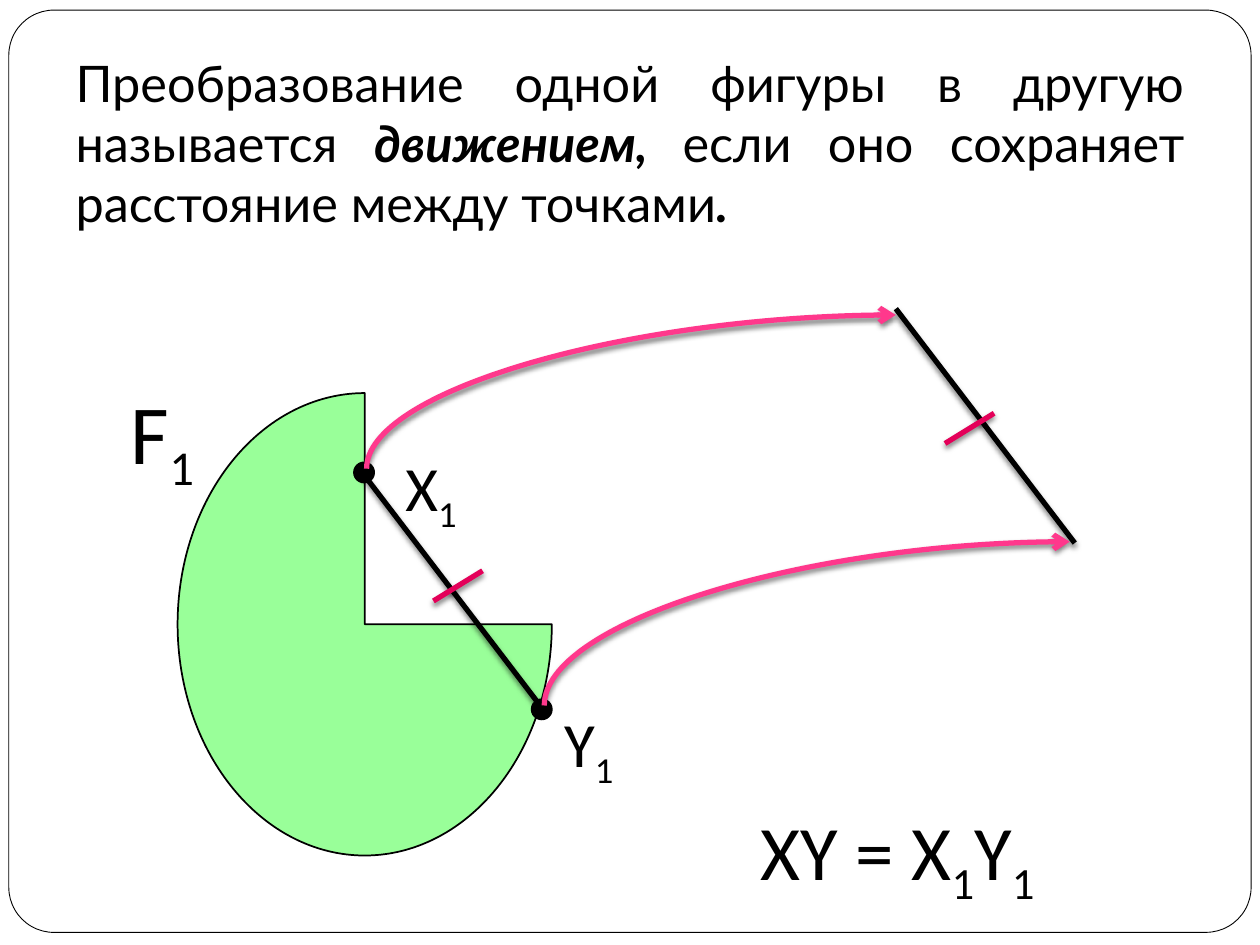
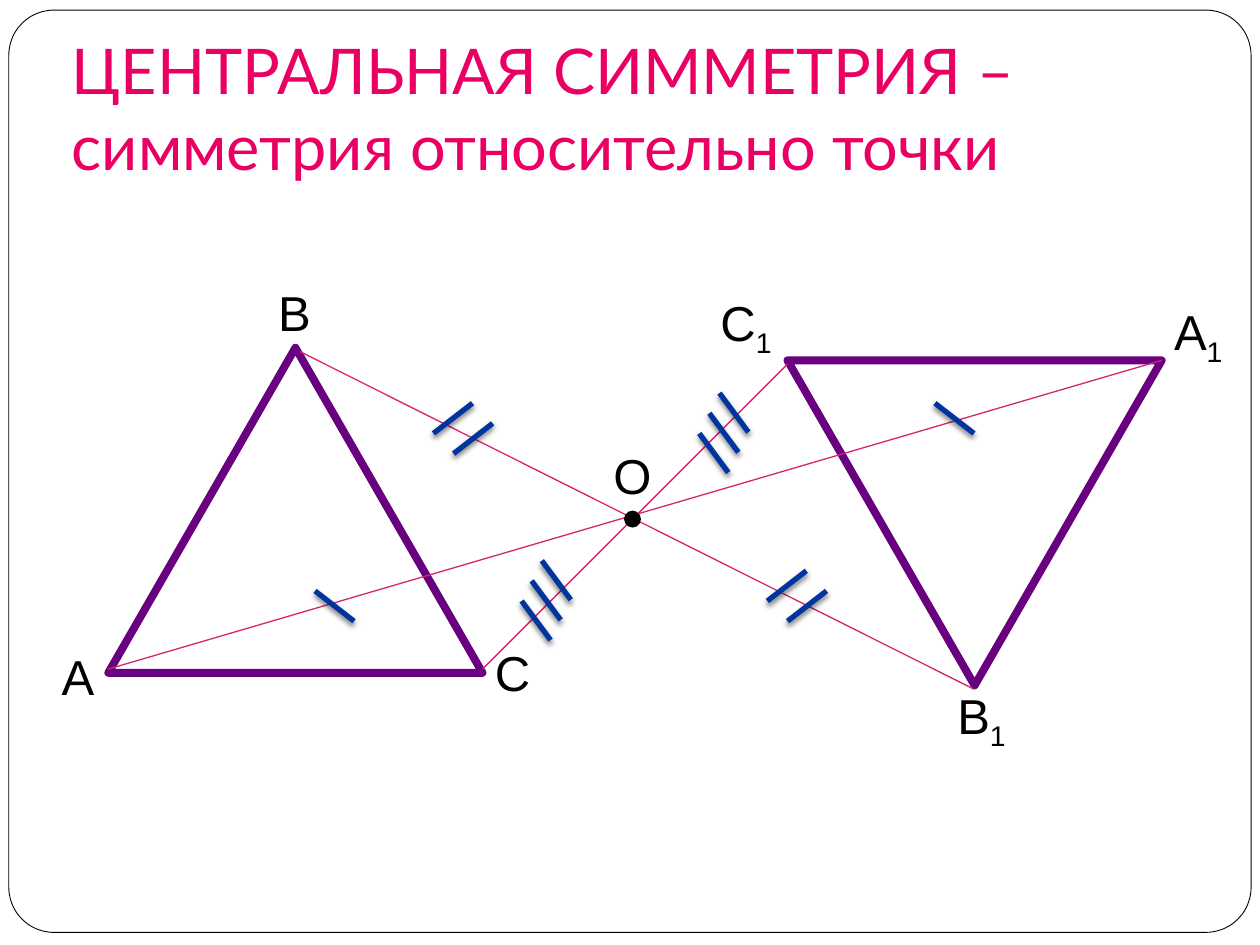
"""Build two geometry slides: motion and central symmetry."""
from itertools import groupby

from lxml import etree
from pptx import Presentation
from pptx.dml.color import RGBColor
from pptx.enum.shapes import MSO_CONNECTOR, MSO_SHAPE
from pptx.enum.text import MSO_ANCHOR, MSO_AUTO_SIZE, PP_ALIGN
from pptx.oxml import parse_xml
from pptx.oxml.ns import nsdecls, qn
from pptx.util import Inches, Pt

BLACK = RGBColor(0x00, 0x00, 0x00)
WHITE = RGBColor(0xFF, 0xFF, 0xFF)
GREEN = RGBColor(0x99, 0xFF, 0x99)
PURPLE = RGBColor(0x68, 0x00, 0x7F)
NAVY = RGBColor(0x00, 0x34, 0x9E)
ROSE = RGBColor(0xD4, 0x25, 0x6F)
CRIMSON = RGBColor(0xE4, 0x00, 0x59)
PINK = RGBColor(0xFF, 0x38, 0x8C)
MAGENTA = RGBColor(0xE9, 0x00, 0x62)

STRAIGHT, CURVE = MSO_CONNECTOR.STRAIGHT, MSO_CONNECTOR.CURVE
ROUND, PIE = MSO_SHAPE.ROUNDED_RECTANGLE, MSO_SHAPE.PIE
OVAL, TRIANGLE = MSO_SHAPE.OVAL, MSO_SHAPE.ISOSCELES_TRIANGLE
JUSTIFY, LEFT = PP_ALIGN.JUSTIFY, PP_ALIGN.LEFT
BOTTOM = MSO_ANCHOR.BOTTOM
FIXED, GROW = MSO_AUTO_SIZE.NONE, MSO_AUTO_SIZE.SHAPE_TO_FIT_TEXT

HEAD = {"word_wrap": True, "auto_size": FIXED, "vertical_anchor": BOTTOM,
        "margin_left": Inches(0.1), "margin_right": Inches(0.1),
        "margin_top": Inches(0.05), "margin_bottom": Inches(0.1)}
LABEL = {"word_wrap": True, "auto_size": GROW}
PLAIN = {"bold": False, "italic": False}
STRONG = {"bold": True, "italic": True}
SHADOW = (f'<a:effectLst {nsdecls("a")}><a:outerShdw blurRad="38100" '
          'dist="25400" dir="5400000" rotWithShape="0"><a:srgbClr '
          'val="000000"><a:alpha val="50000"/></a:srgbClr>'
          '</a:outerShdw></a:effectLst>')


def apply(item, values):
    """Set each attribute named in a dict of values."""
    for name, value in values.items():
        setattr(item, name, value)


class Deck:
    """Hold the shared style and the current slide."""

    def __init__(self):
        """Open a blank deck of the right size."""
        self.prs = Presentation()
        self.prs.slide_width, self.prs.slide_height = Inches(10), Inches(7.5)
        self.slide = None

    def page(self):
        """Start a slide with a title."""
        self.slide = self.prs.slides.add_slide(self.prs.slide_layouts[5])

    def frame(self):
        """Put the rounded frame on the slide master."""
        frame = self.shape(ROUND, (0.07, 0.08, 9.86, 7.32), WHITE, BLACK, 0.5)
        frame.adjustments[0] = 0.049
        node = frame._element
        node.nvSpPr.cNvPr.set("id", "99")
        self.prs.slide_master.shapes._spTree.insert(2, node)

    def text(self, para, words, size, face, color, style=PLAIN):
        """Add a run to a paragraph."""
        run = para.add_run()
        run.text = words
        apply(run.font, {"size": Pt(size), "name": face, **style})
        run.font.color.rgb = color
        return run

    def title(self, box, parts, size, color, align=LEFT):
        """Fill and place the title from styled parts."""
        title = self.slide.shapes.title
        apply(title, dict(zip(("left", "top", "width", "height"),
                              map(Inches, box))))
        apply(title.text_frame, HEAD)
        para = title.text_frame.paragraphs[0]
        para.alignment = align
        for words, style in parts:
            self.text(para, words, size, "Lato", color, style)

    def label(self, box, words, size, face):
        """Add a label whose digits are subscripts."""
        area = self.slide.shapes.add_textbox(*map(Inches, box)).text_frame
        apply(area, LABEL)
        para = area.paragraphs[0]
        for low, chars in groupby(words, str.isdigit):
            run = self.text(para, "".join(chars), size, face, BLACK)
            if low:
                run.font._element.set("baseline", "-25000")

    def shape(self, kind, box, fill, line, width):
        """Add a filled and outlined preset shape."""
        shape = self.slide.shapes.add_shape(kind, *map(Inches, box))
        shape.shadow.inherit = False
        shape.fill.solid()
        shape.fill.fore_color.rgb = fill
        shape.line.color.rgb = line
        shape.line.width = Pt(width)
        return shape

    def dot(self, x, y, size):
        """Add a black point by its top left corner."""
        self.shape(OVAL, (x, y, size, size), BLACK, BLACK, 1)

    def line(self, start, end, color, width=3, shade=True, kind=STRAIGHT):
        """Add a line, with a soft shadow if wanted."""
        line = self.slide.shapes.add_connector(kind, *map(Inches, start + end))
        line.line.color.rgb = color
        line.line.width = Pt(width)
        props = line._element.spPr
        if shade:
            props.append(parse_xml(SHADOW))
        else:
            etree.SubElement(props, qn("a:effectLst"))
        return line

    def arc(self, start, end):
        """Add an arrow that leaves upward and arrives rightward."""
        (x, y), (u, v) = start, end
        mid, cent = (x + u) / 2, (y + v) / 2
        wide, high = (y - v) / 2, (u - x) / 2
        arc = self.line((mid + wide, cent + high), (mid - wide, cent - high),
                        PINK, kind=CURVE)
        props = arc._element.spPr
        props.find(qn("a:xfrm")).set("rot", "5400000")
        props.find(qn("a:prstGeom")).set("prst", "curvedConnector2")
        etree.SubElement(props.find(qn("a:ln")), qn("a:tailEnd"), type="arrow")

    def ticks(self, start, size, color, count=1, step=(0, 0)):
        """Add equal marks at a constant step."""
        for i in range(count):
            x, y = (a + i * b for a, b in zip(start, step))
            self.line((x, y), (x + size[0], y + size[1]), color)


def motion(deck):
    """Draw the slide that defines a motion."""
    deck.page()
    deck.frame()
    deck.title((0.5, 0.31, 9, 1.64), [
        ("Преобразование одной фигуры в другую называется ", PLAIN),
        ("движением, ", STRONG),
        ("если оно сохраняет расстояние между точками", PLAIN),
        (". ", STRONG)], 28.8, BLACK, JUSTIFY)
    deck.shape(PIE, (1.41, 3.12, 2.97, 3.67), GREEN, BLACK, 1)
    for x, y in ((2.81, 3.67), (4.22, 5.55)):
        deck.dot(x, y, 0.16)
    for box, words, size in (((0.94, 2.97, 0.78, 0.91), "F1", 48),
                             ((3.12, 3.51, 0.86, 0.71), "X1", 36),
                             ((4.38, 5.54, 0.94, 0.71), "Y1", 36),
                             ((5.94, 6.33, 3.75, 0.84), "XY = X1Y1", 44)):
        deck.label(box, words, size, "Calibri")
    for x, y in ((2.89, 3.77), (7.11, 2.45)):
        deck.line((x, y), (x + 1.42, y + 1.86), BLACK)
    for start in ((3.44, 4.77), (7.5, 3.52)):
        deck.ticks(start, (0.39, -0.24), CRIMSON)
    deck.arc((2.91, 3.72), (7.11, 2.5))
    deck.arc((4.32, 5.6), (8.49, 4.3))


def centre(deck):
    """Draw the slide on symmetry about a point."""
    deck.page()
    deck.title((0.47, 0.3, 9.03, 1.25), [
        ("ЦЕНТРАЛЬНАЯ СИММЕТРИЯ – симметрия относительно точки", PLAIN)],
        36, MAGENTA)
    for x, y, turn in ((0.86, 2.76, 0), (6.25, 2.86, 180)):
        shape = deck.shape(TRIANGLE, (x, y, 2.97, 2.58), WHITE, PURPLE, 4.5)
        shape.rotation = turn
    for x, y, words in ((4.77, 3.49, "О"), (3.83, 5.05, "С"), (0.39, 5.08, "А"),
                        (2.11, 2.19, "В"), (9.22, 2.34, "А1"),
                        (7.5, 5.39, "В1"), (5.62, 2.27, "С1")):
        wide = 0.55 if words == "О" else 0.86
        deck.label((x, y, wide, 0.57), words, 28, "Arial")
    for start, end in (((0.86, 5.31), (9.22, 2.86)),
                       ((2.38, 2.79), (7.73, 5.47)),
                       ((3.83, 5.31), (6.25, 2.89))):
        deck.line(start, end, ROSE, 0.75, False)
    for size, count, step, starts in (
            ((0.31, 0.24), 1, (0, 0), ((2.5, 4.69), (7.42, 3.2))),
            ((0.31, -0.24), 2, (0.16, 0.16), ((3.44, 3.44), (6.09, 4.77))),
            ((0.23, 0.31), 3, (0.08, -0.16), ((5.55, 3.44), (4.14, 4.77)))):
        for start in starts:
            deck.ticks(start, size, NAVY, count, step)
    deck.dot(4.96, 4.06, 0.12)


def main():
    """Build and save the deck."""
    deck = Deck()
    motion(deck)
    centre(deck)
    deck.prs.save("out.pptx")


if __name__ == "__main__":
    main()
